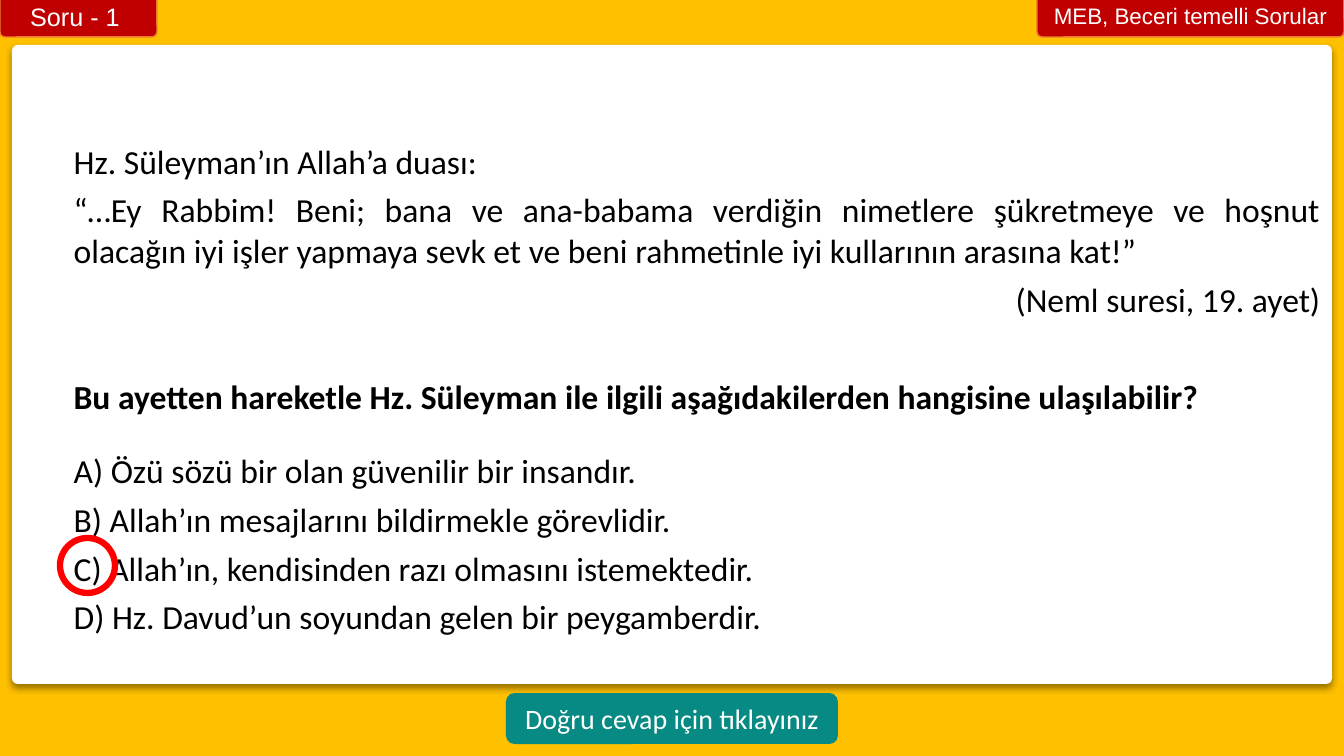
from lxml import etree
from pptx import Presentation
from pptx import util as u
from pptx.dml.color import RGBColor
from pptx.enum import shapes, text

GOLD = RGBColor(0xFF, 0xC0, 0x00)
WHITE = RGBColor(0xFF, 0xFF, 0xFF)
BLACK = RGBColor(0x00, 0x00, 0x00)
TEAL = RGBColor(0x06, 0x8A, 0x83)
RED = RGBColor(0xFF, 0x00, 0x00)
CRIMSON = RGBColor(0xC0, 0x00, 0x00)
ORANGE = RGBColor(0xED, 0x7D, 0x31)
KIND = shapes.MSO_SHAPE
ALIGN = text.PP_ALIGN
PX = 914400 / 100.8


def px(n):
    return u.Emu(round(n * PX))


def draw(kind, box, fill=None, line=None, width=1, bend=None):
    shape = slide.shapes.add_shape(kind, *map(px, box))
    shape.shadow.inherit = False
    if bend is not None:
        shape.adjustments[0] = bend
    if fill is None:
        shape.fill.background()
    else:
        shape.fill.solid()
        shape.fill.fore_color.rgb = fill
    if line is None:
        shape.line.fill.background()
    else:
        shape.line.color.rgb = line
        shape.line.width = u.Pt(width)
    return shape


def write(par, words, size, face, color, align, bold=False):
    par.alignment = align
    run = par.add_run()
    run.text = words
    font = run.font
    font.size = u.Pt(size)
    font.name = face
    font.bold = bold
    font.color.rgb = color


deck = Presentation()
deck.slide_width, deck.slide_height = px(1344), px(756)
slide = deck.slides.add_slide(deck.slide_layouts[6])

draw(KIND.RECTANGLE, (0, 0, 1344, 756), GOLD)

card = draw(KIND.ROUNDED_RECTANGLE, (12, 45, 1320, 639), WHITE, bend=0.009)
NS = "http://schemas.openxmlformats.org/drawingml/2006/main"
glow = etree.fromstring(
    f'<a:outerShdw xmlns:a="{NS}" blurRad="50800" dist="38100" dir="5400000" '
    'algn="t" rotWithShape="0"><a:srgbClr val="000000">'
    '<a:alpha val="40000"/></a:srgbClr></a:outerShdw>')
card._element.spPr.find(f"{{{NS}}}effectLst").append(glow)

frame = card.text_frame
frame.word_wrap = True
frame.vertical_anchor = text.MSO_ANCHOR.TOP
frame.margin_left = px(60)
frame.margin_top = px(94)
lines = [
    ("Hz. Süleyman’ın Allah’a duası:", ALIGN.JUSTIFY, 6, False),
    ("“…Ey Rabbim! Beni; bana ve ana-babama verdiğin nimetlere şükretmeye "
     "ve hoşnut olacağın iyi işler yapmaya sevk et ve beni rahmetinle iyi "
     "kullarının arasına kat!”", ALIGN.JUSTIFY, 6, False),
    ("(Neml suresi, 19. ayet)", ALIGN.RIGHT, 41, False),
    ("Bu ayetten hareketle Hz. Süleyman ile ilgili aşağıdakilerden "
     "hangisine ulaşılabilir?", ALIGN.JUSTIFY, 24, True),
    ("A) Özü sözü bir olan güvenilir bir insandır.", ALIGN.JUSTIFY, 6, False),
    ("B) Allah’ın mesajlarını bildirmekle görevlidir.", ALIGN.JUSTIFY, 6, False),
    ("C) Allah’ın, kendisinden razı olmasını istemektedir.", ALIGN.JUSTIFY, 6, False),
    ("D) Hz. Davud’un soyundan gelen bir peygamberdir.", ALIGN.JUSTIFY, 6, False),
]
for i, (words, align, after, bold) in enumerate(lines):
    par = frame.add_paragraph() if i else frame.paragraphs[0]
    par.space_after = u.Pt(after)
    write(par, words, 24, "Calibri", BLACK, align, bold)

draw(KIND.OVAL, (60, 538, 55, 55), line=RED, width=4.5)

labels = [
    ("Doğru cevap için tıklayınız", (506, 693, 332, 51), TEAL, None, None, 20, "Calibri"),
    ("MEB, Beceri temelli Sorular", (1037, -5, 307, 42), CRIMSON, ORANGE, 0.121, 16, "Arial"),
    ("Soru - 1 ", (0, -5, 157, 42), CRIMSON, ORANGE, 0.121, 18, "Arial"),
]
for words, box, fill, line, bend, size, face in labels:
    label = draw(KIND.ROUNDED_RECTANGLE, box, fill, line, bend=bend)
    frame = label.text_frame
    frame.word_wrap = True
    frame.vertical_anchor = text.MSO_ANCHOR.MIDDLE
    write(frame.paragraphs[0], words, size, face, WHITE, ALIGN.CENTER)

deck.save("out.pptx")
